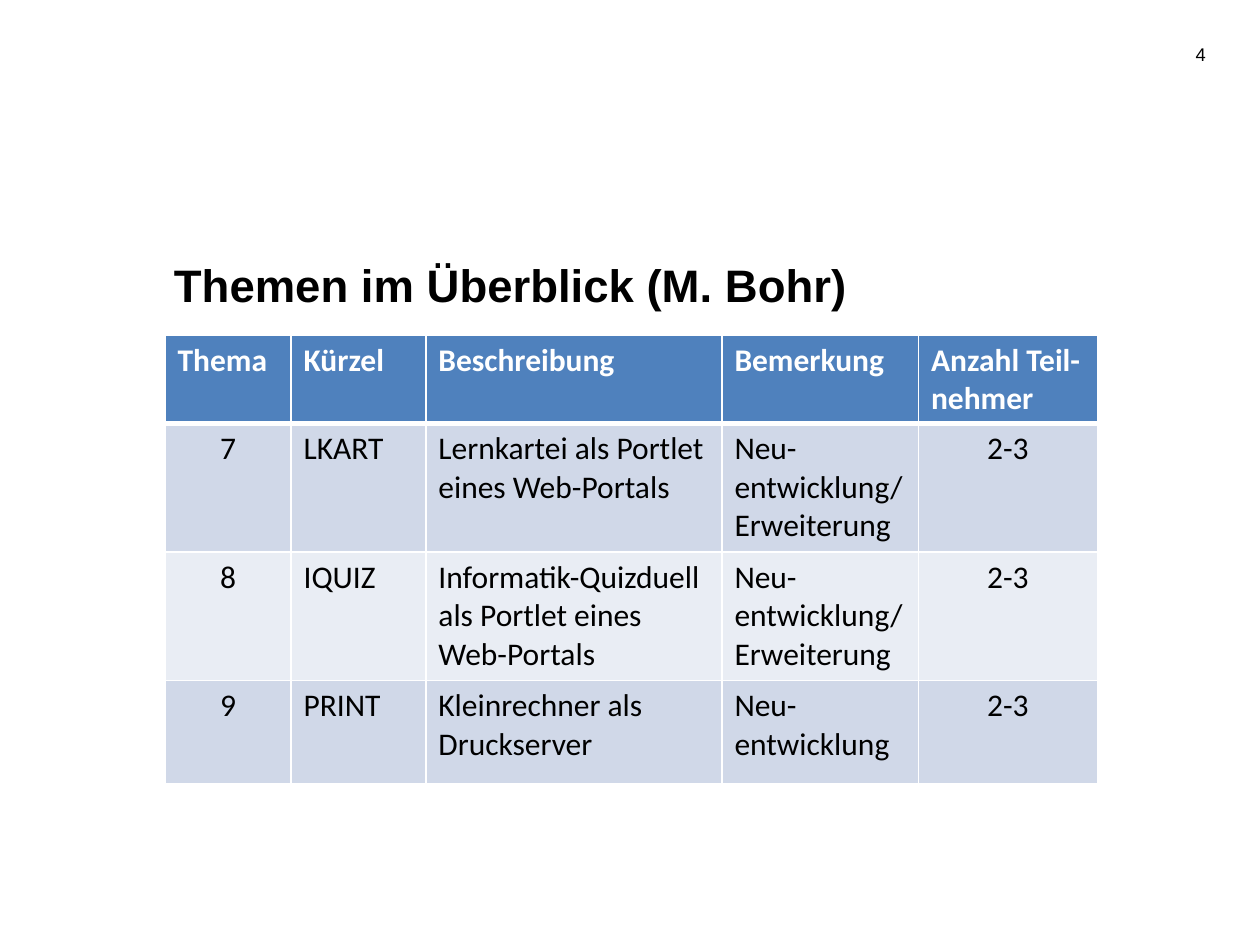
from lxml.etree import SubElement
from pptx import Presentation
from pptx.dml.color import RGBColor
from pptx.enum.text import MSO_ANCHOR as Anchor, MSO_AUTO_SIZE as Fit, PP_ALIGN as Align
from pptx.oxml.ns import qn
from pptx.util import Inches, Pt

HEAD = ["Thema", "Kürzel", "Beschreibung", "Bemerkung", "Anzahl Teil-nehmer"]
TOPICS = [
    ["7", "LKART", "Lernkartei als Portlet eines Web-Portals",
     "Neu-entwicklung/ Erweiterung", "2-3"],
    ["8", "IQUIZ", "Informatik-Quizduell als Portlet eines Web-Portals",
     "Neu-entwicklung/ Erweiterung", "2-3"],
    ["9", "PRINT", "Kleinrechner als Druckserver", "Neu-entwicklung", "2-3"],
]
WIDTHS = [1, 1.07, 2.35, 1.56, 1.42]
HEIGHTS = [0.7, 1.02, 1.02, 0.82]
CENTRED = (0, 4)


def paint(item, color):
    """Give a fill or a font a solid hex colour."""
    if hasattr(item, "solid"):
        item.solid()
        item.fore_color.rgb = RGBColor.from_string(color)
    else:
        item.color.rgb = RGBColor.from_string(color)


def write(frame, text, font, size, color, bold=False, align=Align.LEFT):
    frame.text = text
    frame.word_wrap = True
    para = frame.paragraphs[0]
    para.alignment = align
    for run in para.runs:
        run.font.name = font
        run.font.size = Pt(size)
        run.font.bold = bold
        paint(run.font, color)


def inset(frame, left, top, right, bottom):
    frame.margin_left, frame.margin_top = Inches(left), Inches(top)
    frame.margin_right, frame.margin_bottom = Inches(right), Inches(bottom)


def border(cell, base):
    """Draw white cell edges, with the bottom one of the given width."""
    props = cell._tc.get_or_add_tcPr()
    edges = {"a:lnL": 1, "a:lnR": 1, "a:lnT": 1, "a:lnB": base}
    for spot, (tag, width) in enumerate(edges.items()):
        line = props.makeelement(qn(tag), {"w": str(Pt(width))})
        fill = SubElement(line, qn("a:solidFill"))
        SubElement(fill, qn("a:srgbClr"), val="FFFFFF")
        props.insert(spot, line)


def add_title(slide, x, y, w, h):
    title = slide.shapes.title
    title.left, title.top, title.width, title.height = map(Inches, (x, y, w, h))
    frame = title.text_frame
    write(frame, "Themen im Überblick (M. Bohr)", "Arial", 26, "000000", True)
    frame.auto_size = Fit.NONE
    frame.vertical_anchor = Anchor.BOTTOM
    inset(frame, 0.04, 0.04, 0.02, 0.1)


def add_number(slide, x, y, w, h):
    box = slide.shapes.add_textbox(*map(Inches, (x, y, w, h)))
    frame = box.text_frame
    write(frame, "4", "Arial", 10.5, "000000", align=Align.RIGHT)
    frame.vertical_anchor = Anchor.MIDDLE
    inset(frame, 0.04, 0.04, 0.04, 0.04)


def add_topics(slide, x, y, w, h):
    rows = [HEAD] + TOPICS
    table = slide.shapes.add_table(
        len(rows), len(HEAD), *map(Inches, (x, y, w, h))).table
    for col, width in zip(table.columns, WIDTHS):
        col.width = Inches(width * w / sum(WIDTHS))
    for row, height in zip(table.rows, HEIGHTS):
        row.height = Inches(height * h / sum(HEIGHTS))
    for r, row in enumerate(rows):
        head = r == 0
        back = "4F81BD" if head else ("E9EDF4", "D0D8E8")[r % 2]
        for c, text in enumerate(row):
            cell = table.cell(r, c)
            middle = not head and c in CENTRED
            write(cell.text_frame, text, "Calibri", 18,
                  "FFFFFF" if head else "000000", head,
                  Align.CENTER if middle else Align.LEFT)
            paint(cell.fill, back)
            border(cell, 3 if r == 0 else 1)
            if r == 1:
                # The first topic shares the thick edge under the head
                cell._tc.tcPr.find(qn("a:lnT")).set("w", str(Pt(3)))


def main():
    deck = Presentation()
    deck.slide_width, deck.slide_height = Inches(10), Inches(7.5)
    slide = deck.slides.add_slide(deck.slide_layouts[5])
    paint(slide.background.fill, "FFFFFF")
    add_title(slide, 1.34, 1.55, 7.13, 1.02)
    add_number(slide, 8.94, 0.23, 0.67, 0.4)
    add_topics(slide, 1.31, 2.66, sum(WIDTHS), sum(HEIGHTS))
    deck.save("out.pptx")


if __name__ == "__main__":
    main()
